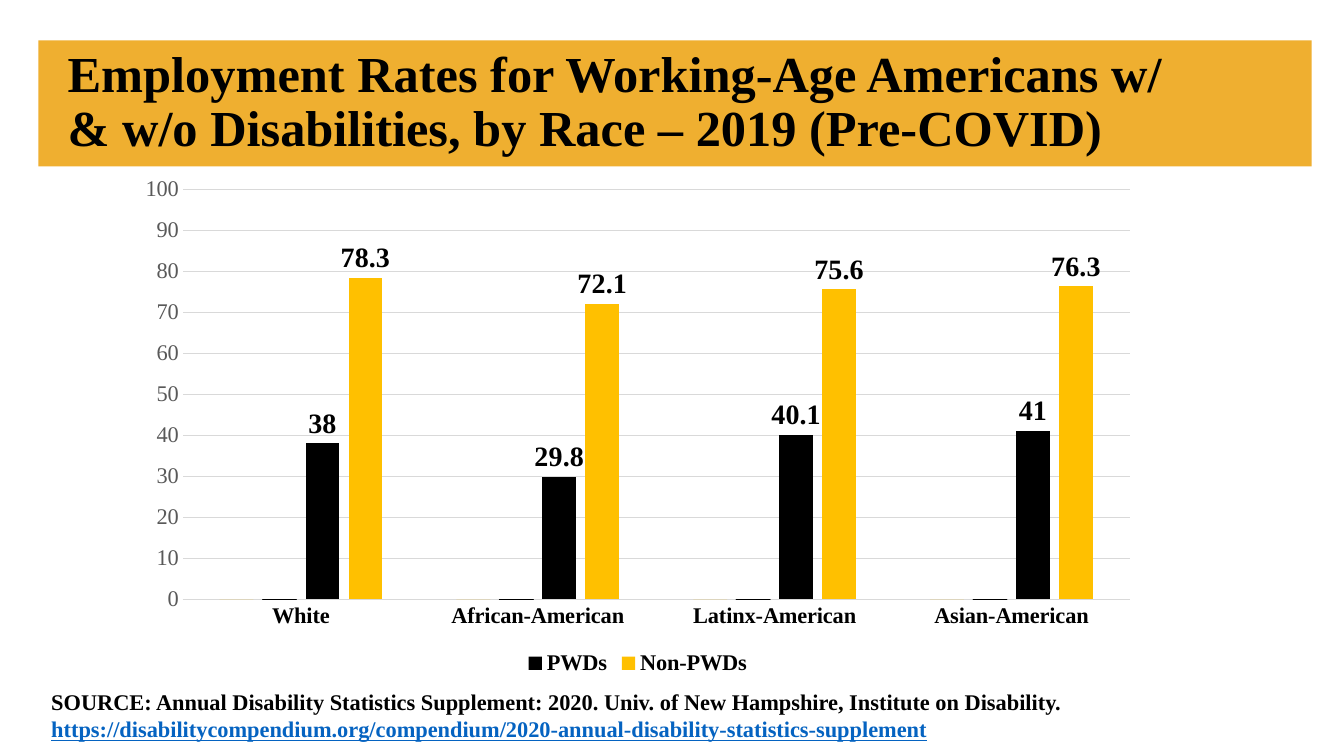
from dataclasses import dataclass
from typing import Optional

import pptx
import pptx.chart.data
import pptx.dml.color
import pptx.enum.chart
import pptx.enum.shapes
import pptx.enum.text
import pptx.oxml
import pptx.oxml.ns
import pptx.util
from pptx.util import Inches

RGBColor = pptx.dml.color.RGBColor
BLACK = RGBColor(0x00, 0x00, 0x00)
GOLD = RGBColor(0xFF, 0xC0, 0x00)
BAND = RGBColor(0xEF, 0xAF, 0x30)
GRID = RGBColor(0xD9, 0xD9, 0xD9)
GRAY = RGBColor(0x59, 0x59, 0x59)
LINK = RGBColor(0x05, 0x63, 0xC1)
FONT = "Times New Roman"


@dataclass
class Series:
    name: str
    values: tuple[float, ...]
    color: RGBColor
    shown: bool = True
    outline: Optional[RGBColor] = None


CATEGORIES = ("White", "African-American", "Latinx-American", "Asian-American")
SERIES = (
    Series("Series 1", (0, 0, 0, 0), GOLD, shown=False),
    Series("Series 2", (0, 0, 0, 0), BLACK, shown=False, outline=BLACK),
    Series("PWDs", (38, 29.8, 40.1, 41), BLACK),
    Series("Non-PWDs", (78.3, 72.1, 75.6, 76.3), GOLD),
)


def set_font(font, size: float, color: RGBColor = BLACK, bold: bool = True,
             underline: Optional[bool] = None) -> None:
    font.name = FONT
    font.size = pptx.util.Pt(size)
    font.bold = bold
    font.underline = underline
    font.color.rgb = color


def add_text(p, text: str, **fmt) -> None:
    r = p.add_run()
    r.text = text
    set_font(r.font, **fmt)


def set_line(line, color: RGBColor) -> None:
    line.color.rgb = color
    line.width = pptx.util.Pt(0.75)


def add_title(s) -> None:
    band = s.shapes.add_shape(pptx.enum.shapes.MSO_SHAPE.RECTANGLE,
                              Inches(0.38), Inches(0.4), Inches(12.63), Inches(1.25))
    band.shadow.inherit = False
    band.fill.solid()
    band.fill.fore_color.rgb = BAND
    band.line.fill.background()

    title = s.shapes.title
    title.left, title.top = Inches(0.57), Inches(0.4)
    title.width, title.height = Inches(11.5), Inches(1.25)
    band.element.addnext(title.element)  # title in front of the band
    tf = title.text_frame
    tf.word_wrap = True
    tf.auto_size = pptx.enum.text.MSO_AUTO_SIZE.NONE
    tf.vertical_anchor = pptx.enum.text.MSO_ANCHOR.MIDDLE
    p = tf.paragraphs[0]
    p.alignment = pptx.enum.text.PP_ALIGN.LEFT
    p.line_spacing = 0.9
    add_text(p, "Employment Rates for Working-Age Americans w/ & w/o Disabilities, "
                "by Race – 2019 (Pre-COVID)", size=36)


def add_source(s) -> None:
    tb = s.shapes.add_textbox(Inches(0.41), Inches(6.78), Inches(12.92), Inches(0.91))
    tf = tb.text_frame
    tf.word_wrap = True
    add_text(tf.paragraphs[0], "SOURCE: Annual Disability Statistics Supplement: 2020. "
             "Univ. of New Hampshire, Institute on Disability.", size=16)
    add_text(tf.add_paragraph(), "https://disabilitycompendium.org/compendium/"
             "2020-annual-disability-statistics-supplement",
             size=16, color=LINK, underline=True)


def add_legend(chart) -> None:
    chart.has_legend = True
    legend = chart.legend
    legend.position = pptx.enum.chart.XL_LEGEND_POSITION.BOTTOM
    legend.include_in_layout = False
    set_font(legend.font, 16)
    # Leave the all-zero series out of the legend
    previous = legend._element.find(pptx.oxml.ns.qn("c:legendPos"))
    for i, series in enumerate(SERIES):
        if not series.shown:
            entry = pptx.oxml.parse_xml(
                f'<c:legendEntry {pptx.oxml.ns.nsdecls("c")}>'
                f'<c:idx val="{i}"/><c:delete val="1"/></c:legendEntry>')
            previous.addnext(entry)
            previous = entry


def add_rates_chart(s) -> None:
    data = pptx.chart.data.CategoryChartData()
    data.categories = CATEGORIES
    for series in SERIES:
        data.add_series(series.name, series.values)
    chart = s.shapes.add_chart(pptx.enum.chart.XL_CHART_TYPE.COLUMN_CLUSTERED,
                               Inches(1.24), Inches(1.65), Inches(10.17), Inches(5.1),
                               data).chart
    chart.has_title = False
    set_font(chart.font, 14, bold=False)

    # Columns and value labels
    plot = chart.plots[0]
    plot.vary_by_categories = False
    plot.gap_width, plot.overlap = 219, -27
    for column, series in zip(plot.series, SERIES):
        column.format.fill.solid()
        column.format.fill.fore_color.rgb = series.color
        if series.outline is not None:
            set_line(column.format.line, series.outline)
        if series.shown:
            labels = column.data_labels
            labels.show_value = True
            labels.position = pptx.enum.chart.XL_LABEL_POSITION.OUTSIDE_END
            set_font(labels.font, 20)

    # Axes
    for axis in (chart.category_axis, chart.value_axis):
        axis.major_tick_mark = pptx.enum.chart.XL_TICK_MARK.NONE
        axis.minor_tick_mark = pptx.enum.chart.XL_TICK_MARK.NONE
    set_font(chart.category_axis.tick_labels.font, 16)
    set_line(chart.category_axis.format.line, GRID)
    rates = chart.value_axis
    rates.minimum_scale, rates.maximum_scale, rates.major_unit = 0, 100, 10
    set_font(rates.tick_labels.font, 16, color=GRAY, bold=False)
    rates.format.line.fill.background()
    set_line(rates.major_gridlines.format.line, GRID)

    add_legend(chart)


def main() -> None:
    prs = pptx.Presentation()
    prs.slide_width, prs.slide_height = Inches(13.33), Inches(7.5)
    s = prs.slides.add_slide(prs.slide_layouts.get_by_name("Title Only"))
    add_title(s)
    add_source(s)
    add_rates_chart(s)
    prs.save("out.pptx")


if __name__ == "__main__":
    main()
